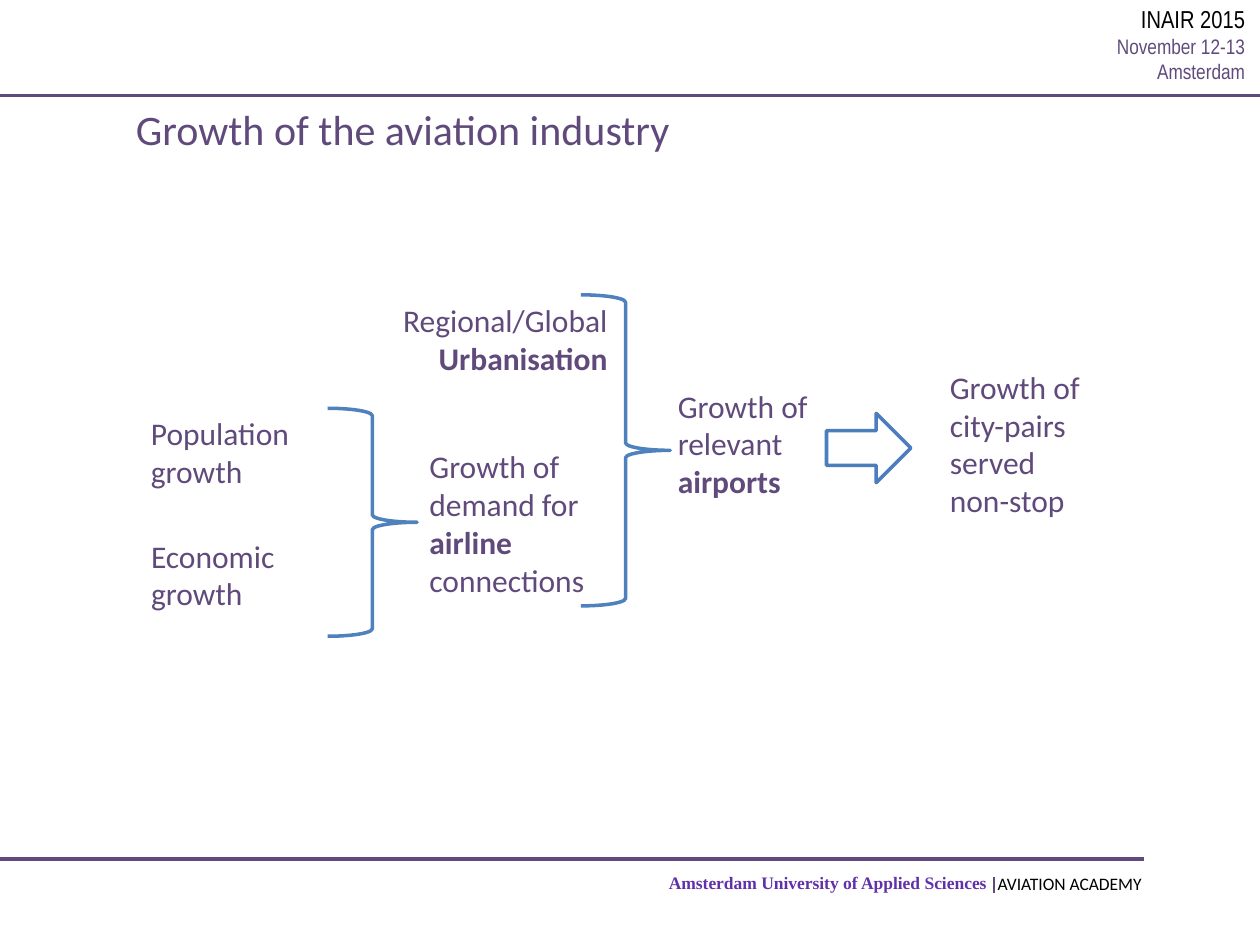
from lxml import etree
from pptx import Presentation
from pptx.dml.color import RGBColor
from pptx.enum.shapes import MSO_CONNECTOR, MSO_SHAPE
from pptx.enum.text import MSO_AUTO_SIZE, PP_ALIGN
from pptx.oxml.ns import qn
from pptx.util import Pt

STRAIGHT = MSO_CONNECTOR.STRAIGHT
BRACE, ARROW = MSO_SHAPE.RIGHT_BRACE, MSO_SHAPE.RIGHT_ARROW
LEFT, RIGHT = PP_ALIGN.LEFT, PP_ALIGN.RIGHT
FIT_SHAPE = MSO_AUTO_SIZE.SHAPE_TO_FIT_TEXT

COLORS = {"purple": "604A7B", "violet": "6031A9", "black": "000000",
          "brace": "4F81BD", "arrow": "4B7EBC"}

RULES = [
    ((0, 491), (653.8, 491), 2),
    ((0, 54.7), (720, 54.7), 2),
    ((568.1, 501.1), (568.1, 510.5), 1),
]

HEADER_STYLE = ("Arial Narrow", 12, "purple", False)
LABEL_STYLE = ("Calibri", 18, "purple", False)
BOLD_LABEL = ("Calibri", 18, "purple", True)

TEXTS = [
    ((375.1, 494.6, 198.7, 19.4), LEFT,
     [[("Amsterdam University of Applied Sciences",
        ("Times New Roman", 10, "violet", True))]]),
    ((557.3, -1.4, 161.3, 53.3), RIGHT,
     [[("INAIR 2015", ("Arial Narrow", 14, "black", False))],
      [("November 12-13", HEADER_STYLE)],
      [("Amsterdam", HEADER_STYLE)]]),
    ((563, 495.4, 102.2, 19.4), LEFT,
     [[("AVIATION ACADEMY", ("Calibri", 10, "black", False))]]),
    ((70.6, 55.4, 562.3, 58.3), LEFT,
     [[("Growth of the aviation industry", ("Calibri", 24, "purple", False))]]),
    ((79.2, 233.3, 108, 51), LEFT, [[("Population growth", LABEL_STYLE)]]),
    ((79.2, 303.1, 85.7, 51), LEFT, [[("Economic growth", LABEL_STYLE)]]),
    ((214.6, 168.5, 139.7, 51), RIGHT,
     [[("Regional/Global", LABEL_STYLE)], [("Urbanisation", BOLD_LABEL)]]),
    ((238.3, 252, 111.6, 94.3), LEFT,
     [[("Growth of demand for ", LABEL_STYLE), ("airline", BOLD_LABEL),
       (" connections", LABEL_STYLE)]]),
    ((380.2, 217.4, 118.8, 72.7), LEFT,
     [[("Growth of relevant ", LABEL_STYLE), ("airports", BOLD_LABEL)]]),
    ((535.7, 206.6, 114.5, 94.3), LEFT,
     [[(line, LABEL_STYLE)]
      for line in ("Growth of", "city-pairs", "served", "non-stop")]),
]

SHAPES = [
    (BRACE, (187.2, 233.3, 51.1, 130.3), "brace"),
    (BRACE, (331.9, 168.5, 51.1, 177.8), "brace"),
    (ARROW, (472.3, 236.2, 48.2, 39.6), "arrow"),
]


def color(name):
    return RGBColor.from_string(COLORS[name])


def points(values):
    return [Pt(value) for value in values]


def add_rule(slide, start, end, width):
    rule = slide.shapes.add_connector(STRAIGHT, *points(start + end))
    rule.line.color.rgb = color("purple")
    rule.line.width = Pt(width)
    etree.SubElement(rule._element.spPr, qn("a:effectLst"))


def add_text(slide, box, alignment, paragraphs):
    text_frame = slide.shapes.add_textbox(*points(box)).text_frame
    text_frame.word_wrap = True
    text_frame.auto_size = FIT_SHAPE
    for index, runs in enumerate(paragraphs):
        paragraph = text_frame.add_paragraph() if index else text_frame.paragraphs[0]
        paragraph.alignment = alignment
        for text, (font_name, size, color_name, bold) in runs:
            run = paragraph.add_run()
            run.text = text
            run.font.name = font_name
            run.font.size = Pt(size)
            run.font.bold = bold
            run.font.color.rgb = color(color_name)


def add_outline(slide, kind, box, color_name):
    shape = slide.shapes.add_shape(kind, *points(box))
    shape.shadow.inherit = False
    shape.fill.background()
    shape.line.color.rgb = color(color_name)
    shape.line.width = Pt(2)


def main():
    presentation = Presentation()
    presentation.slide_width, presentation.slide_height = Pt(720), Pt(540)
    slide = presentation.slides.add_slide(presentation.slide_layouts[6])
    for rule in RULES:
        add_rule(slide, *rule)
    for text in TEXTS:
        add_text(slide, *text)
    for outline in SHAPES:
        add_outline(slide, *outline)
    presentation.save("out.pptx")


if __name__ == "__main__":
    main()
